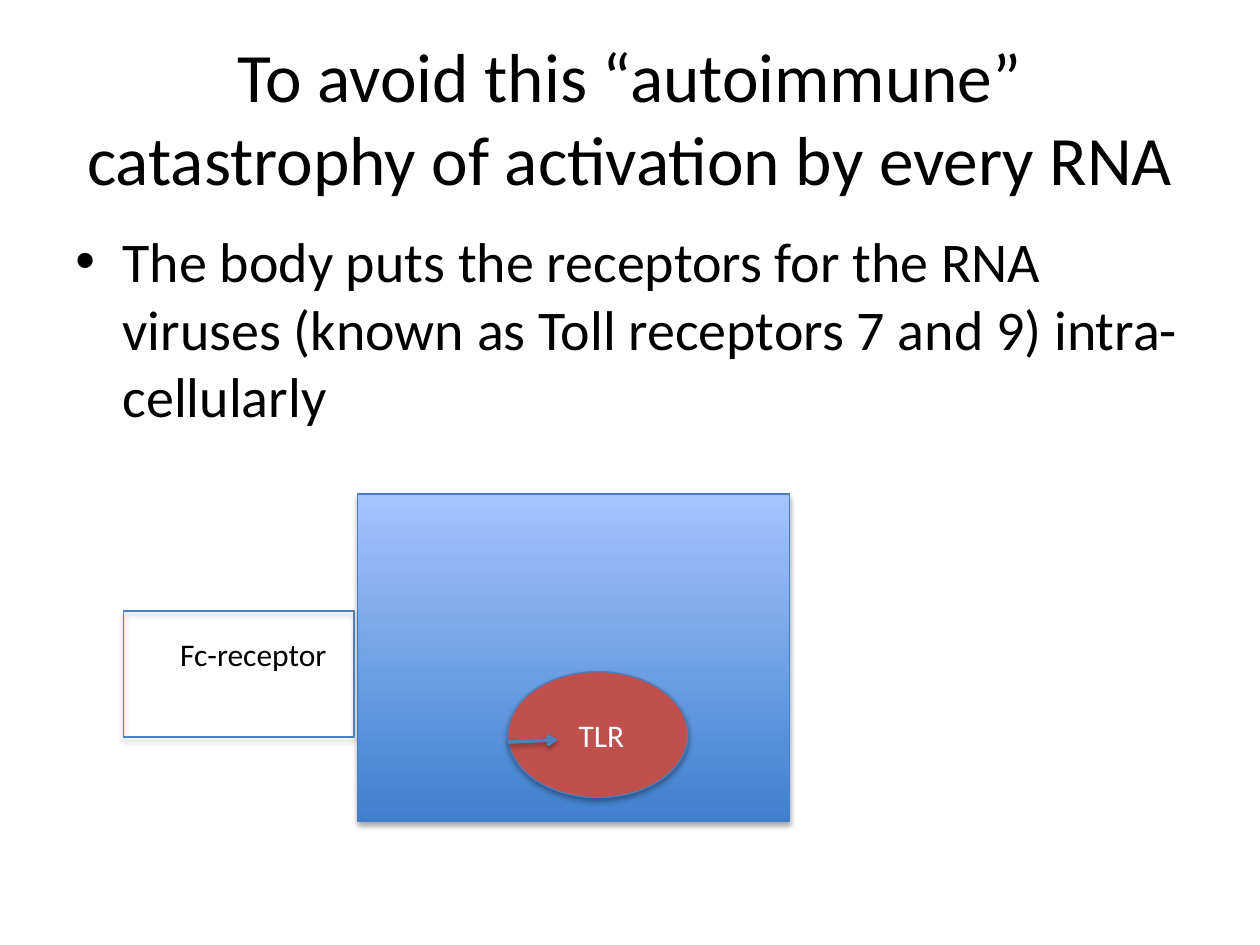
from dataclasses import dataclass
from typing import Optional

import lxml.etree
import pptx
import pptx.dml.color
import pptx.enum.dml
import pptx.enum.shapes
import pptx.enum.text
import pptx.oxml.ns
import pptx.util

Cm, Pt = pptx.util.Cm, pptx.util.Pt
RGB = pptx.dml.color.RGBColor.from_string
SHAPE = pptx.enum.shapes.MSO_SHAPE
ALIGN = pptx.enum.text.PP_ALIGN
ANCHOR = pptx.enum.text.MSO_ANCHOR
qn = pptx.oxml.ns.qn


@dataclass(frozen=True)
class Theme:
    font: str = "Calibri"
    text: str = "000000"
    light_text: str = "FFFFFF"
    outline: str = "4B7EBC"
    arrow: str = "4F81BD"
    cell_bottom: str = "3F80CE"
    cell_top: str = "A4C4FF"
    receptor: str = "C0504D"
    title_size: float = 39.6
    body_size: float = 32
    label_size: float = 18


@dataclass(frozen=True)
class Box:
    left: float
    top: float
    width: float
    height: float

    def lengths(self) -> tuple:
        return Cm(self.left), Cm(self.top), Cm(self.width), Cm(self.height)


@dataclass(frozen=True)
class Label:
    text: str
    size: float
    color: str = Theme.text
    align: object = ALIGN.LEFT
    anchor: object = ANCHOR.TOP
    wrap: bool = True
    bullet: bool = False


@dataclass(frozen=True)
class Part:
    box: Box
    outline: object
    fills: tuple = ()
    label: Optional[Label] = None


THEME = Theme()

TITLE = Label("To avoid this “autoimmune” catastrophy of activation by every RNA",
              THEME.title_size, align=ALIGN.CENTER, anchor=ANCHOR.MIDDLE)
BODY = Label("The body puts the receptors for the RNA viruses (known as Toll "
             "receptors 7 and 9) intra-cellularly", THEME.body_size, bullet=True)
FC_LABEL = Label("Fc-receptor", THEME.label_size, wrap=False)
TLR_LABEL = Label(" TLR", THEME.label_size, THEME.light_text,
                  ALIGN.CENTER, ANCHOR.MIDDLE)

CELL = Part(Box(7.21, 9.96, 8.71, 6.6), SHAPE.RECTANGLE,
            (THEME.cell_bottom, THEME.cell_top))
TLR = Part(Box(10.24, 13.54, 3.63, 2.54), SHAPE.OVAL, (THEME.receptor,), TLR_LABEL)
FC_RECEPTOR = Part(Box(2.49, 12.32, 4.65, 2.54), SHAPE.RECTANGLE)


def write_label(frame, label: Label) -> None:
    frame.word_wrap = label.wrap
    frame.vertical_anchor = label.anchor
    paragraph = frame.paragraphs[0]
    paragraph.text = label.text
    paragraph.alignment = label.align
    if label.bullet:
        properties = paragraph._p.get_or_add_pPr()
        properties.set("marL", str(Cm(0.95)))
        properties.set("indent", str(Cm(-0.95)))
        lxml.etree.SubElement(properties, qn("a:buFont"), typeface="Arial")
        lxml.etree.SubElement(properties, qn("a:buChar"), char="•")
        paragraph.space_before = Pt(label.size * 0.2)
    paragraph.font.name = THEME.font
    paragraph.font.size = Pt(label.size)
    paragraph.font.color.rgb = RGB(label.color)


def add_text(slide, box: Box, label: Label) -> None:
    write_label(slide.shapes.add_textbox(*box.lengths()).text_frame, label)


def add_shadow(effects, distance: float, opacity: int) -> None:
    shadow = lxml.etree.SubElement(
        effects, qn("a:outerShdw"), blurRad=str(Pt(3.15)), dist=str(Pt(distance)),
        dir="5400000", rotWithShape="0")
    color = lxml.etree.SubElement(shadow, qn("a:srgbClr"), val="000000")
    lxml.etree.SubElement(color, qn("a:alpha"), val=str(opacity * 1000))


def add_part(slide, part: Part) -> None:
    shape = slide.shapes.add_shape(part.outline, *part.box.lengths())
    if len(part.fills) == 2:
        shape.fill.gradient()
        shape.fill.gradient_angle = 90
        for stop, color in zip(shape.fill.gradient_stops, part.fills):
            stop.color.rgb = RGB(color)
    elif part.fills:
        shape.fill.solid()
        shape.fill.fore_color.rgb = RGB(part.fills[0])
    else:
        shape.fill.background()
    shape.line.color.rgb = RGB(THEME.outline)
    shape.line.width = Pt(0.75)
    shape.shadow.inherit = False
    add_shadow(shape._element.spPr.find(qn("a:effectLst")), 1.8, 35)
    if part.label:
        write_label(shape.text_frame, part.label)


def add_arrow(slide, start: tuple[float, float], end: tuple[float, float]) -> None:
    arrow = slide.shapes.add_connector(
        pptx.enum.shapes.MSO_CONNECTOR.STRAIGHT,
        *(Cm(value) for value in start + end))
    arrow.line.color.rgb = RGB(THEME.arrow)
    arrow.line.width = Pt(2)
    lxml.etree.SubElement(arrow.line._get_or_add_ln(), qn("a:tailEnd"), type="arrow")
    add_shadow(lxml.etree.SubElement(arrow._element.spPr, qn("a:effectLst")), 1.6, 38)


def main() -> None:
    presentation = pptx.Presentation()
    presentation.slide_width, presentation.slide_height = Cm(25.4), Cm(19.05)
    slide = presentation.slides.add_slide(presentation.slide_layouts[6])
    add_text(slide, Box(1.27, 0.76, 22.86, 3.18), TITLE)
    add_text(slide, Box(1.27, 4.45, 22.86, 12.57), BODY)
    add_part(slide, CELL)
    add_part(slide, TLR)
    add_arrow(slide, (TLR.box.left, 14.96), (11.25, 14.91))
    add_text(slide, Box(3.38, 12.67, 3.51, 1.02), FC_LABEL)
    add_part(slide, FC_RECEPTOR)
    presentation.save("out.pptx")


if __name__ == "__main__":
    main()
